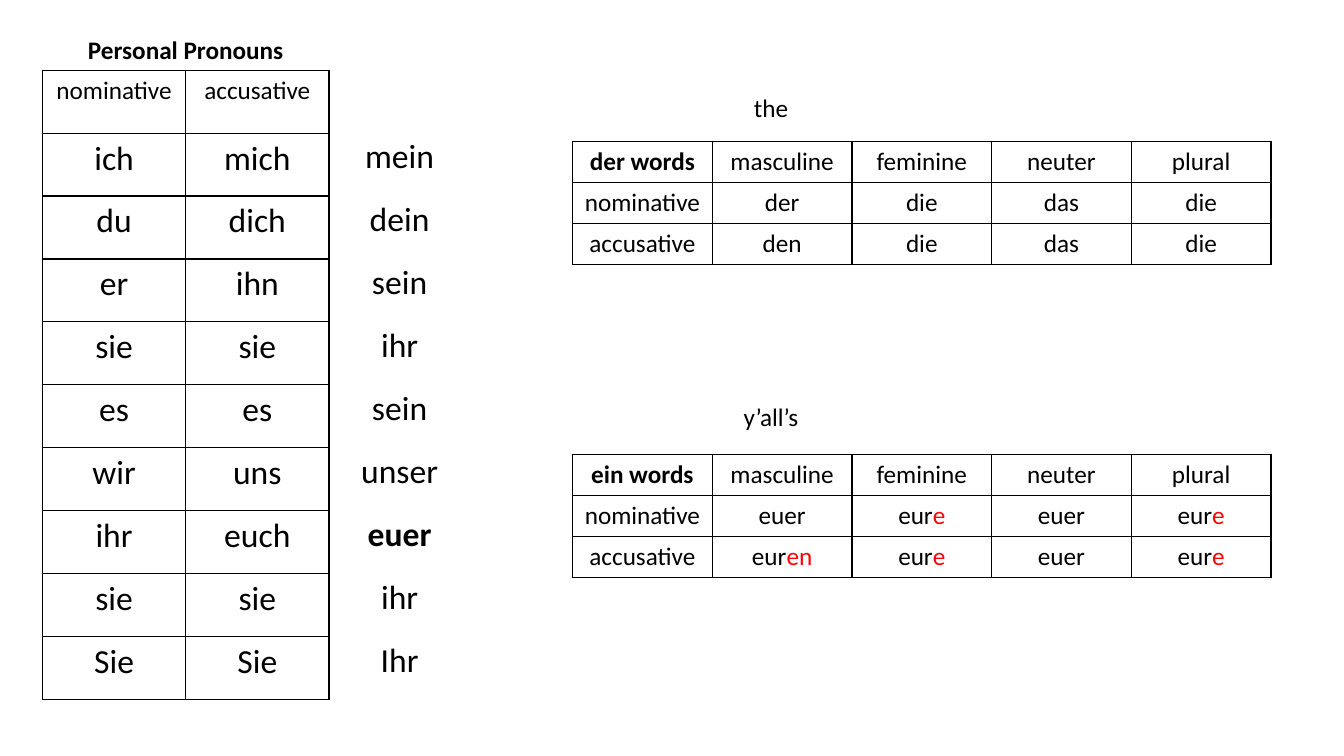
from lxml import etree
from pptx import Presentation
from pptx.dml.color import RGBColor
from pptx.enum.text import PP_ALIGN
from pptx.oxml.ns import qn
from pptx.util import Cm, Pt

CENTER = PP_ALIGN.CENTER
FONT = "Calibri"
BLACK = "000000"
RED = "FF0000"
BORDERS = ("a:lnL", "a:lnR", "a:lnT", "a:lnB")
PLAIN_STYLE = "{2D5ABB26-0587-4C30-8999-92F81FD0307C}"

GENDERS = ["masculine", "feminine", "neuter", "plural"]
PRONOUNS = [
    ("ich", "mich"), ("du", "dich"), ("er", "ihn"), ("sie", "sie"), ("es", "es"),
    ("wir", "uns"), ("ihr", "euch"), ("sie", "sie"), ("Sie", "Sie"),
]
POSSESSIVES = ["mein", "dein", "sein", "ihr", "sein", "unser", "euer", "ihr", "Ihr"]
DER_FORMS = [
    ["nominative", "der", "die", "das", "die"],
    ["accusative", "den", "die", "das", "die"],
]
EIN_FORMS = [
    ["nominative", "euer", "eur|e", "euer", "eur|e"],
    ["accusative", "eur|en", "eur|e", "euer", "eur|e"],
]


def color(hex_code):
    """Turn a hex string into a colour."""
    return RGBColor.from_string(hex_code)


def write(frame, wording, size, bold=False):
    """Write centred wording, with any ending after a bar in red."""
    stem, _, ending = wording.partition("|")
    frame.text = stem
    line = frame.paragraphs[0]
    line.alignment = CENTER
    if ending:
        line.add_run().text = ending
    for run, shade in zip(line.runs, (BLACK, RED)):
        run.font.name = FONT
        run.font.size = Pt(size)
        run.font.bold = bold
        run.font.color.rgb = color(shade)


def outline(cell):
    """Draw a thin black border on all sides of a cell."""
    properties = cell._tc.get_or_add_tcPr()
    for position, side in enumerate(BORDERS):
        border = etree.Element(qn(side), w=str(Pt(1)))
        fill = etree.SubElement(border, qn("a:solidFill"))
        etree.SubElement(fill, qn("a:srgbClr"), val=BLACK)
        properties.insert(position, border)


def add_grid(slide, box, rows, sizes, bold_words=(), bordered=True):
    """Fill the box with an even table, with one text size per row."""
    left, top, width, height = box
    table = slide.shapes.add_table(
        len(rows), len(rows[0]), Cm(left), Cm(top), Cm(width), Cm(height)
    ).table
    table.first_row = False
    table.horz_banding = False
    table._tbl.tblPr.find(qn("a:tableStyleId")).text = PLAIN_STYLE
    for column in table.columns:
        column.width = Cm(width / len(rows[0]))
    for row, words, size in zip(table.rows, rows, sizes):
        row.height = Cm(height / len(rows))
        for cell, word in zip(row.cells, words):
            write(cell.text_frame, word, size, word in bold_words)
            cell.fill.background()
            if bordered:
                outline(cell)


def add_caption(slide, left, top, wording, bold=False):
    """Place a centred caption."""
    frame = slide.shapes.add_textbox(Cm(left), Cm(top), Cm(7), Cm(1.03)).text_frame
    frame.word_wrap = True
    write(frame, wording, 18, bold)


def add_pronouns(slide, left, top):
    """Place the pronoun table, its caption and the matching possessives."""
    width, height = 7.22, 15.85
    row_height = height / (len(PRONOUNS) + 1)
    add_caption(slide, left + 0.11, top - 1.03, "Personal Pronouns", bold=True)
    add_grid(slide, (left, top, width, height),
             [("nominative", "accusative")] + PRONOUNS, [18] + [24] * len(PRONOUNS))
    add_grid(slide, (left + width + 0.18, top + row_height - 0.03, 3.2, height - row_height),
             [[word] for word in POSSESSIVES], [24] * len(POSSESSIVES),
             bold_words=("euer",), bordered=False)


def add_declension(slide, left, top, caption, caption_gap, heading, forms):
    """Place a declension table with its translation above."""
    add_caption(slide, left + 1.5, top - caption_gap, caption)
    add_grid(slide, (left, top, 17.6, 3.1), [[heading] + GENDERS] + forms,
             [18] * 3, bold_words=(heading,))


def main():
    """Build and save the grammar slide."""
    deck = Presentation()
    deck.slide_width = Cm(33.87)
    deck.slide_height = Cm(19.05)
    slide = deck.slides.add_slide(deck.slide_layouts[6])
    add_pronouns(slide, 1.07, 1.77)
    add_declension(slide, 14.43, 3.57, "the", 1.36, "der words", DER_FORMS)
    add_declension(slide, 14.43, 11.46, "y’all’s", 1.48, "ein words", EIN_FORMS)
    deck.save("out.pptx")


if __name__ == "__main__":
    main()
